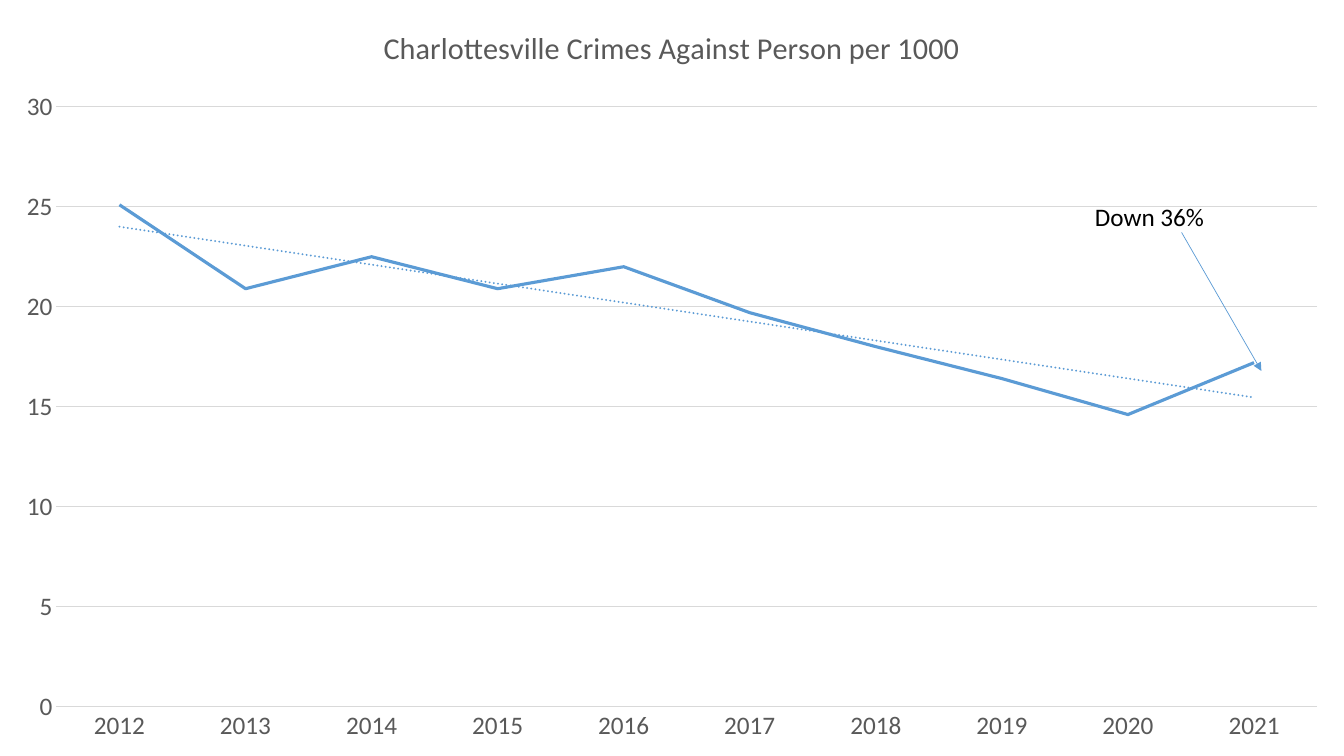
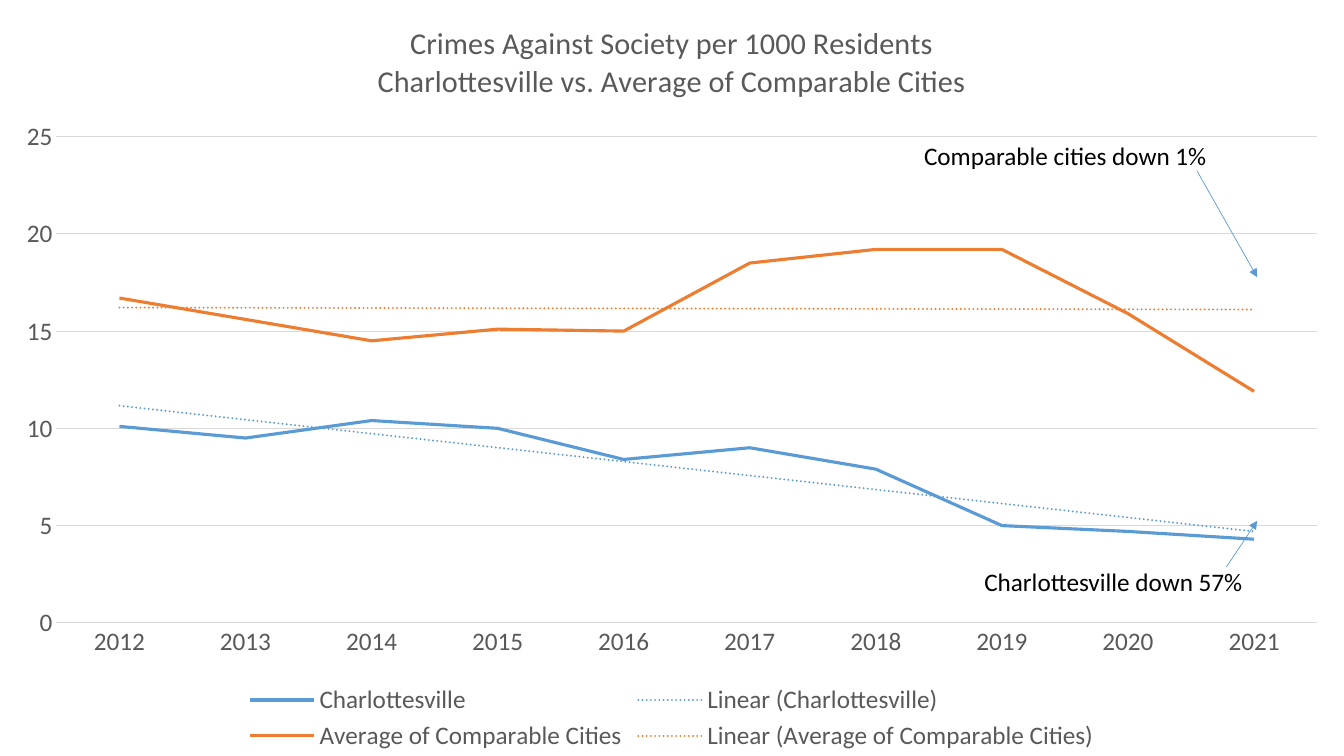
from lxml import etree
from pptx import Presentation
from pptx.chart import data
from pptx.dml import color
from pptx.enum import chart as charts, dml, shapes, text
from pptx.oxml import ns
from pptx.util import Pt

COLORS = {"blue": "5B9BD5", "orange": "ED7D31", "label": "595959",
          "grid": "D9D9D9", "note": "000000"}
FONT = "Calibri"
WIDTH, HEIGHT = 960, 540
YEARS = [str(year) for year in range(2012, 2022)]

SLIDES = [
    {
        "title": ["Charlottesville Crimes Against Person per 1000"],
        "top": 30, "number_format": "General", "legend": False,
        "series": [
            ("Charlottesville Crimes Against Person per 1000", "blue",
             [25.1, 20.9, 22.5, 20.9, 22, 19.7, 18, 16.4, 14.6, 17.2]),
        ],
        "notes": [
            ("Down 36%", (775, 140, 94, 29), (844, 166), (901, 265)),
        ],
    },
    {
        "title": ["Crimes Against Society per 1000 Residents",
                  "Charlottesville vs. Average of Comparable Cities"],
        "top": 25, "number_format": "#,##0", "legend": True,
        "series": [
            ("Charlottesville", "blue",
             [10.1, 9.5, 10.4, 10, 8.4, 9, 7.9, 5, 4.7, 4.3]),
            ("Average of Comparable Cities", "orange",
             [16.7, 15.6, 14.5, 15.1, 15, 18.5, 19.2, 19.2, 15.9, 11.9]),
        ],
        "notes": [
            ("Comparable cities down 1%", (653, 97, 219, 29), (855, 122), (898, 198)),
            ("Charlottesville down 57%", (696, 401, 202, 29), (876, 405), (898, 372)),
        ],
    },
]


def rgb(name):
    return color.RGBColor.from_string(COLORS[name])


def set_font(font, size=18, name="label"):
    for key, value in {"name": FONT, "size": Pt(size), "bold": False}.items():
        setattr(font, key, value)
    font.color.rgb = rgb(name)


def set_line(line, name, width):
    line.color.rgb = rgb(name)
    line.width = Pt(width)


def add_trend(series, name):
    """Give a series a dotted linear trend line."""
    trend = etree.Element(ns.qn("c:trendline"))
    properties = etree.SubElement(trend, ns.qn("c:spPr"))
    line = etree.SubElement(properties, ns.qn("a:ln"), w=str(Pt(1.5)), cap="rnd")
    fill = etree.SubElement(line, ns.qn("a:solidFill"))
    etree.SubElement(fill, ns.qn("a:srgbClr"), val=COLORS[name])
    etree.SubElement(line, ns.qn("a:prstDash"), val="sysDot")
    for tag, value in (("trendlineType", "linear"), ("dispRSqr", "0"), ("dispEq", "0")):
        etree.SubElement(trend, ns.qn("c:" + tag), val=value)
    series._element.find(ns.qn("c:cat")).addprevious(trend)


def style_title(chart, lines):
    chart.has_title = True
    frame = chart.chart_title.text_frame
    for index, line in enumerate(lines):
        para = frame.add_paragraph() if index else frame.paragraphs[0]
        span = para.add_run()
        span.text = line
        set_font(para.font, 21.6)
        set_font(span.font, 21.6)


def style_axes(chart, top, number_format):
    for axis in (chart.category_axis, chart.value_axis):
        axis.major_tick_mark = axis.minor_tick_mark = charts.XL_TICK_MARK.NONE
        set_font(axis.tick_labels.font)
    set_line(chart.category_axis.format.line, "grid", 0.75)
    values = chart.value_axis
    scale = {"minimum_scale": 0, "maximum_scale": top, "major_unit": 5,
             "has_major_gridlines": True}
    for key, value in scale.items():
        setattr(values, key, value)
    values.format.line.fill.background()
    set_line(values.major_gridlines.format.line, "grid", 0.75)
    values.tick_labels.number_format = number_format
    values.tick_labels.number_format_is_linked = False


def style_legend(chart, shown):
    chart.has_legend = shown
    if shown:
        chart.legend.position = charts.XL_LEGEND_POSITION.BOTTOM
        chart.legend.include_in_layout = False
        set_font(chart.legend.font)


def add_line_chart(page, content):
    chart_data = data.CategoryChartData()
    chart_data.categories = YEARS
    for label, _, values in content["series"]:
        chart_data.add_series(label, values)
    chart = page.shapes.add_chart(charts.XL_CHART_TYPE.LINE, 0, 0, Pt(WIDTH),
                                  Pt(HEIGHT), chart_data).chart
    set_font(chart.font, name="note")
    style_title(chart, content["title"])
    style_axes(chart, content["top"], content["number_format"])
    style_legend(chart, content["legend"])
    chart.plots[0].vary_by_categories = False
    for series, (_, name, _) in zip(chart.plots[0].series, content["series"]):
        series.smooth = False
        series.marker.style = charts.XL_MARKER_STYLE.NONE
        set_line(series.format.line, name, 2.25)
        add_trend(series, name)


def add_note(page, words, place):
    box = page.shapes.add_textbox(*map(Pt, place))
    frame = box.text_frame
    frame.word_wrap = False
    frame.auto_size = text.MSO_AUTO_SIZE.SHAPE_TO_FIT_TEXT
    span = frame.paragraphs[0].add_run()
    span.text = words
    set_font(span.font, name="note")


def add_arrow(page, start, end):
    arrow = page.shapes.add_connector(shapes.MSO_CONNECTOR.STRAIGHT,
                                      *map(Pt, start + end))
    set_line(arrow.line, "blue", 0.5)
    arrow.line.dash_style = dml.MSO_LINE.SOLID
    properties = arrow._element.spPr
    etree.SubElement(properties.find(ns.qn("a:ln")), ns.qn("a:tailEnd"), type="triangle")
    etree.SubElement(properties, ns.qn("a:effectLst"))


def main():
    deck = Presentation()
    deck.slide_width, deck.slide_height = Pt(WIDTH), Pt(HEIGHT)
    for content in SLIDES:
        page = deck.slides.add_slide(deck.slide_layouts[6])
        add_line_chart(page, content)
        for words, place, start, end in content["notes"]:
            add_note(page, words, place)
            add_arrow(page, start, end)
    deck.save("out.pptx")


if __name__ == "__main__":
    main()
